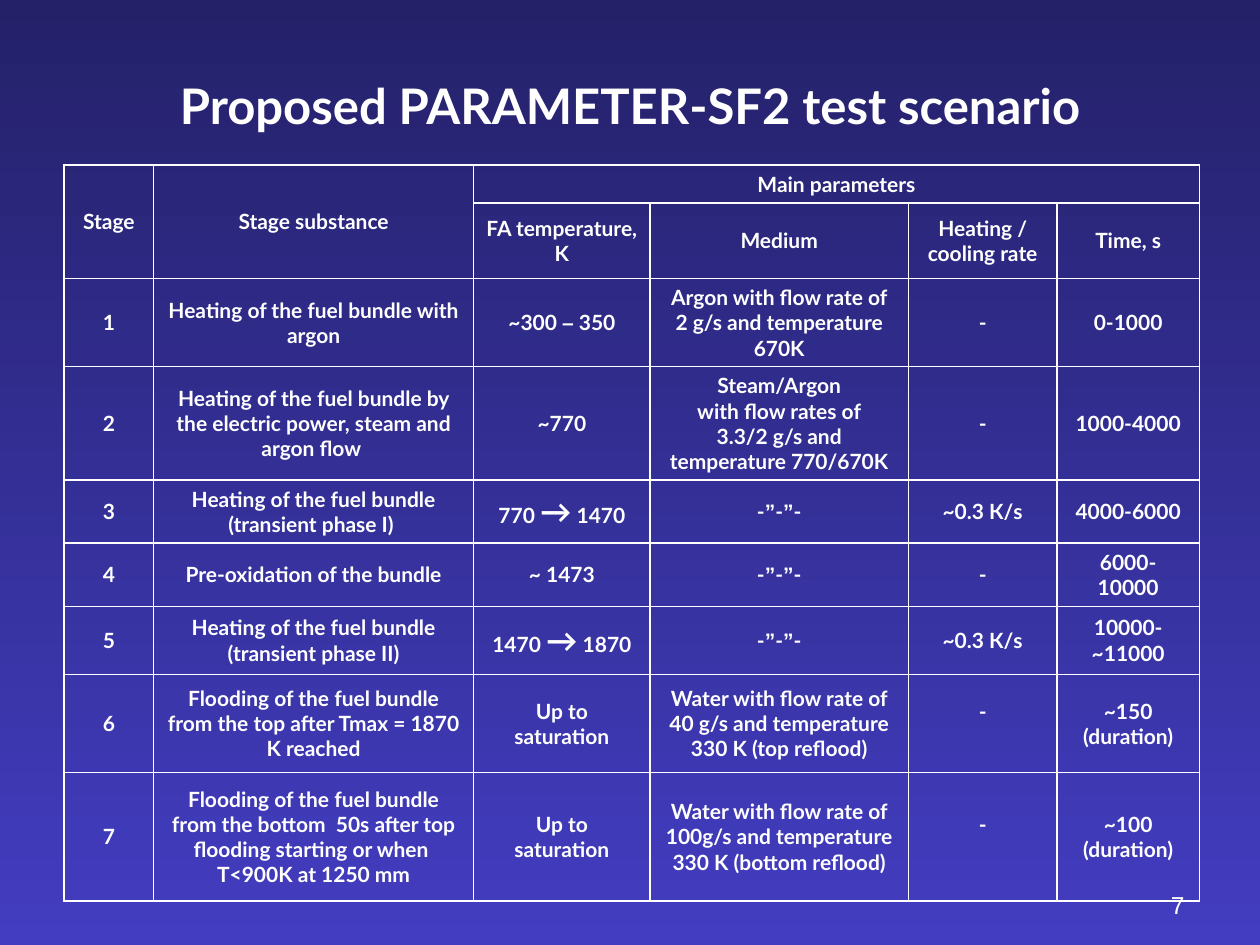
from itertools import groupby

from lxml import etree
from pptx import Presentation
from pptx.dml import color
from pptx.enum import text
from pptx.oxml import ns
from pptx.util import Inches, Pt

WHITE = "FFFFFF"
COLUMN_WIDTHS = [0.71, 2.54, 1.4, 2.05, 1.18, 1.13]
ROW_HEIGHTS = [0.3, 0.6, 0.7, 0.9, 0.5, 0.5, 0.54, 0.78, 1.02]
SPECIAL_STYLES = {"–": ("Arial", 12), "”": ("Arial", 12), "→": ("Lato", 18)}
DITTO = "-”-”-"
STAGES = [
    ["Stage", "Stage substance", "Main parameters", "", "", ""],
    ["", "", "FA temperature, K", "Medium", "Heating / cooling rate", "Time, s"],
    ["1", "Heating of the fuel bundle with argon", "~300 – 350",
     "Argon with flow rate of 2 g/s and temperature 670K", "-", "0-1000"],
    ["2", "Heating of the fuel bundle by the electric power, steam and argon flow ", "~770",
     "Steam/Argon\nwith flow rates of\n3.3/2 g/s and temperature 770/670K", "-", "1000-4000"],
    ["3", "Heating of the fuel bundle\n(transient phase I) ", "770 → 1470",
     DITTO, "~0.3 К/s", "4000-6000"],
    ["4", "Pre-oxidation of the bundle", "~ 1473", DITTO, "-", "6000-10000"],
    ["5", "Heating of the fuel bundle\n(transient phase II)", "1470 → 1870",
     DITTO, "~0.3 К/s", "10000- ~11000"],
    ["6", "Flooding of the fuel bundle from the top after Tmax = 1870 K reached",
     "Up to saturation", "Water with flow rate of 40 g/s and temperature 330 K (top reflood)",
     "-", "~150\n(duration)"],
    ["7", "Flooding of the fuel bundle from the bottom  50s after top flooding starting "
     "or when  T<900K at 1250 mm", "Up to saturation",
     "Water with flow rate of 100g/s and temperature 330 K (bottom reflood)",
     "-", "~100\n(duration)"],
]


def rgb(value):
    """Turn a hex string into a colour."""
    return color.RGBColor.from_string(value)


def add_run(paragraph, words, font, size, bold):
    """Add one white run to a paragraph."""
    run = paragraph.add_run()
    run.text = words
    run.font.name = font
    run.font.size = Pt(size)
    run.font.bold = bold
    run.font.color.rgb = rgb(WHITE)


def paint_background(slide):
    """Fill the slide with a vertical blue gradient."""
    fill = slide.background.fill
    fill.gradient()
    fill.gradient_angle = 270
    for stop, shade, position in zip(fill.gradient_stops, ("242169", "433DC1"), (0, 1)):
        stop.color.rgb = rgb(shade)
        stop.position = position


def add_title(slide, words):
    """Place and write the slide title."""
    title = slide.shapes.title
    title.left, title.top = Inches(0.5), Inches(0.42)
    title.width, title.height = Inches(9), Inches(0.83)
    frame = title.text_frame
    frame.vertical_anchor = text.MSO_ANCHOR.MIDDLE
    heading = frame.paragraphs[0]
    heading.alignment = text.PP_ALIGN.CENTER
    add_run(heading, words, "Lato", 28, True)


def add_page_number(slide, number):
    """Write the page number at the bottom right."""
    box = slide.shapes.add_textbox(Inches(7.17), Inches(6.83), Inches(2.33), Inches(0.52))
    frame = box.text_frame
    frame.word_wrap = True
    frame.vertical_anchor = text.MSO_ANCHOR.BOTTOM
    paragraph = frame.paragraphs[0]
    paragraph.alignment = text.PP_ALIGN.RIGHT
    add_run(paragraph, number, "Arial", 14, False)


def add_borders(cell):
    """Draw a thin white line on each side of a cell."""
    properties = cell._tc.get_or_add_tcPr()
    for side in ("a:lnL", "a:lnR", "a:lnT", "a:lnB"):
        line = etree.SubElement(properties, ns.qn(side), w=str(Pt(1)))
        fill = etree.SubElement(line, ns.qn("a:solidFill"))
        etree.SubElement(fill, ns.qn("a:srgbClr"), val=WHITE)


def write_cell(cell, words):
    """Write centred paragraphs, with separate runs for special symbols."""
    cell.vertical_anchor = text.MSO_ANCHOR.MIDDLE
    frame = cell.text_frame
    for index, line in enumerate(words.split("\n")):
        paragraph = frame.add_paragraph() if index else frame.paragraphs[0]
        paragraph.alignment = text.PP_ALIGN.CENTER
        for style, letters in groupby(line, lambda c: SPECIAL_STYLES.get(c, ("Lato", 12))):
            add_run(paragraph, "".join(letters), *style, True)


def add_stage_table(slide):
    """Build the table of test stages."""
    table = slide.shapes.add_table(
        len(ROW_HEIGHTS), len(COLUMN_WIDTHS), Inches(0.51), Inches(1.31),
        Inches(sum(COLUMN_WIDTHS)), Inches(sum(ROW_HEIGHTS))).table
    table.first_row = table.horz_banding = False
    for column, width in zip(table.columns, COLUMN_WIDTHS):
        column.width = Inches(width)
    for row, height, entries in zip(table.rows, ROW_HEIGHTS, STAGES):
        row.height = Inches(height)
        for cell, words in zip(row.cells, entries):
            add_borders(cell)
            cell.fill.background()
            write_cell(cell, words)
    for first, last in (((0, 0), (1, 0)), ((0, 1), (1, 1)), ((0, 2), (0, 5))):
        table.cell(*first).merge(table.cell(*last))
    for flooding_row in (7, 8):
        table.cell(flooding_row, 4).margin_bottom = Inches(0.25)


def main():
    """Build and save the slide."""
    deck = Presentation()
    deck.slide_width, deck.slide_height = Inches(10), Inches(7.5)
    slide = deck.slides.add_slide(deck.slide_layouts[5])
    paint_background(slide)
    add_title(slide, "Proposed PARAMETER-SF2 test scenario")
    add_page_number(slide, "7")
    add_stage_table(slide)
    deck.save("out.pptx")


if __name__ == "__main__":
    main()
